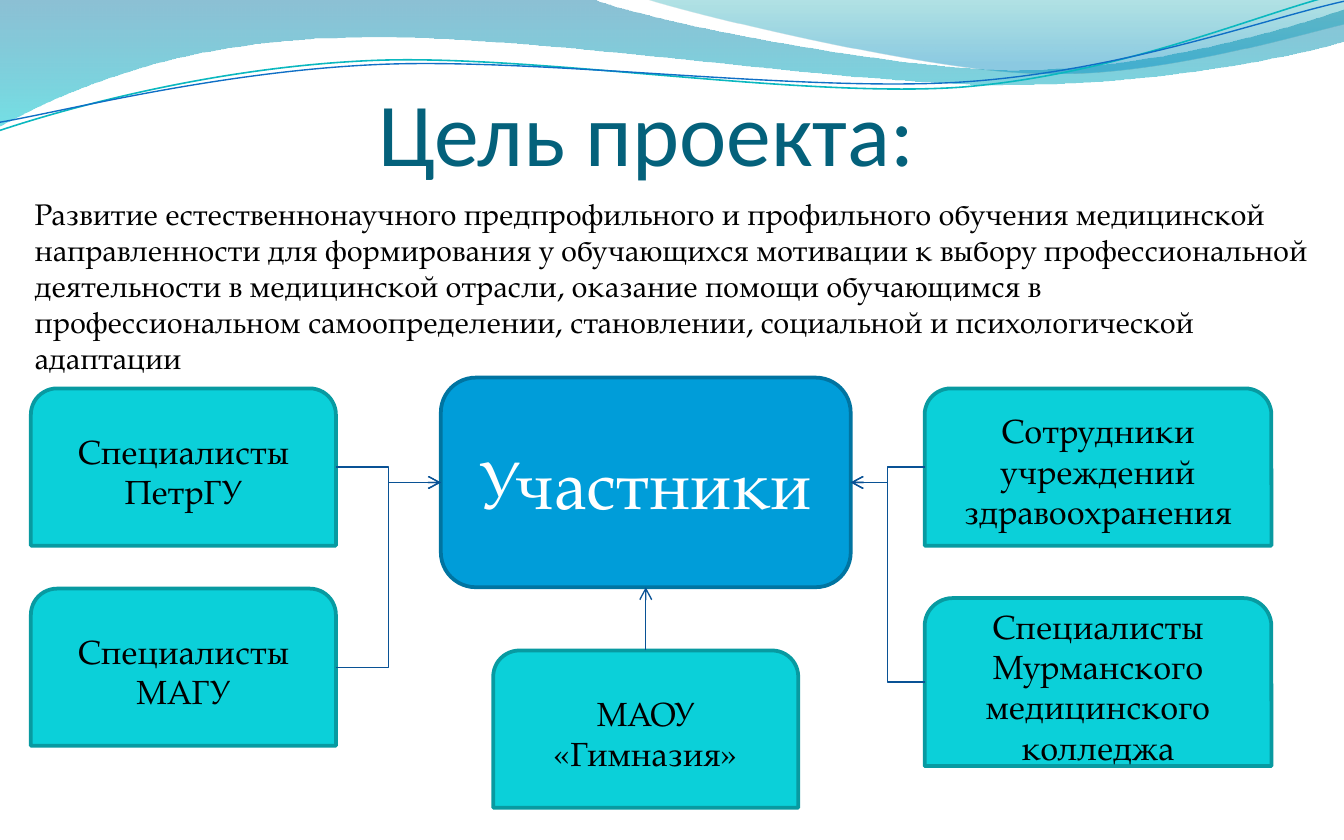
"""Build the project goal slide: a wave header, a statement and a diagram of participants."""
import dataclasses

import lxml.etree
import pptx
import pptx.dml.color
import pptx.enum.shapes
import pptx.enum.text
import pptx.oxml.ns
import pptx.util

Inches = pptx.util.Inches
Pt = pptx.util.Pt
qn = pptx.oxml.ns.qn
rgb = pptx.dml.color.RGBColor.from_string
MSO_SHAPE = pptx.enum.shapes.MSO_SHAPE
MSO_CONNECTOR = pptx.enum.shapes.MSO_CONNECTOR
MSO_ANCHOR = pptx.enum.text.MSO_ANCHOR
PP_ALIGN = pptx.enum.text.PP_ALIGN


@dataclasses.dataclass(frozen=True)
class Theme:
    title_font: str = "Calibri"
    body_font: str = "TeX Gyre Pagella"
    title_size: int = 48
    hub_size: int = 36
    box_size: int = 18
    body_size: int = 16
    title: str = "04617B"
    dark: str = "000000"
    light: str = "FFFFFF"
    hub_fill: str = "009DD9"
    hub_line: str = "0074A1"
    box_fill: str = "0BD0D9"
    box_line: str = "089AA1"
    arrow: str = "095295"
    large_wave: tuple = ((0, "0074A1", 45), (1, "00C6CF", 55))
    small_wave: tuple = ((0, "00A1A9", 30), (0.8, "008BBF", 45))
    teal_curve: str = "0AB8BF"
    blue_curve: str = "0F6FC6"


theme = Theme()


def write_text(shape, text, size, color, font, align, anchor):
    frame = shape.text_frame
    frame.word_wrap = True
    frame.vertical_anchor = anchor
    paragraph = frame.paragraphs[0]
    paragraph.alignment = align
    run = paragraph.add_run()
    run.text = text
    run.font.size = Pt(size)
    run.font.name = font
    run.font.color.rgb = rgb(color)


def draw_outline(shapes, start, segments, closed):
    builder = shapes.build_freeform(Inches(start[0]), Inches(start[1]))
    points = [(Inches(x), Inches(y)) for segment in segments for x, y in segment]
    builder.add_line_segments(points, close=closed)
    shape = builder.convert_to_shape()
    shape.shadow.inherit = False
    steps = iter(list(shape._element.spPr.iter(qn("a:lnTo"))))
    for segment in segments:
        first, *others = [next(steps) for point in segment]
        if others:
            first.tag = qn("a:cubicBezTo")
        for other in others:
            first.append(other[0])
            other.getparent().remove(other)
    return shape


presentation = pptx.Presentation()
presentation.slide_width = Inches(10)
presentation.slide_height = Inches(6.25)
slide = presentation.slides.add_slide(presentation.slide_layouts[6])
shapes = slide.shapes

waves = [
    ((0, 0), [
        ((4.4, -0.01),),
        ((4.76, 0.14), (6.64, 0.52), (7.58, 0.52)),
        ((8.53, 0.52), (9.58, 0.21), (10, 0.07)),
        ((10.01, 0.3),),
        ((9.83, 0.37), (8.7, 0.63), (7.46, 0.63)),
        ((6.22, 0.63), (3.82, 0.23), (2.57, 0.28)),
        ((1.29, 0.3), (0.46, 0.69), (-0.01, 0.94)),
    ], theme.large_wave),
    ((4.79, -0.01), [
        ((5.09, 0.09), (6.82, 0.51), (7.69, 0.54)),
        ((8.56, 0.58), (9.61, 0.27), (10, 0.18)),
        ((10, 0),),
    ], theme.small_wave),
]
for start, segments, stops in waves:
    wave = draw_outline(shapes, start, segments, True)
    wave.line.fill.background()
    wave.fill.gradient()
    wave.fill.gradient_angle = 270
    for stop, (position, color, opacity) in zip(wave.fill.gradient_stops, stops):
        stop.position = position
        stop.color.rgb = rgb(color)
    for element, (position, color, opacity) in zip(wave._element.spPr.iter(qn("a:srgbClr")), stops):
        lxml.etree.SubElement(element, qn("a:alpha"), val=str(opacity * 1000))

curves = [
    ((0, 0.97), [
        ((0.48, 0.81), (1.58, 0.5), (2.77, 0.45)),
        ((3.95, 0.4), (5.92, 0.73), (7.13, 0.65)),
        ((8.33, 0.56), (9.39, 0.09), (9.98, -0.05)),
    ], theme.teal_curve, 0.85),
    ((0, 0.91), [
        ((0.47, 0.83), (1.64, 0.53), (2.83, 0.48)),
        ((4.03, 0.43), (5.97, 0.69), (7.17, 0.61)),
        ((8.36, 0.53), (9.41, 0.14), (10, 0.01)),
    ], theme.blue_curve, 0.75),
]
for start, segments, color, width in curves:
    curve = draw_outline(shapes, start, segments, False)
    curve.fill.background()
    curve.line.color.rgb = rgb(color)
    curve.line.width = Pt(width)

title = shapes.add_textbox(Inches(0.31), Inches(0.62), Inches(9), Inches(0.75))
title.text_frame.margin_left = title.text_frame.margin_right = title.text_frame.margin_bottom = 0
write_text(title, "Цель проекта:", theme.title_size, theme.title, theme.title_font,
           PP_ALIGN.CENTER, MSO_ANCHOR.BOTTOM)

statement = shapes.add_textbox(Inches(0.16), Inches(1.41), Inches(9.69), Inches(1.18))
write_text(
    statement,
    "Развитие естественнонаучного предпрофильного и профильного обучения медицинской "
    "направленности для формирования у обучающихся мотивации к выбору профессиональной "
    "деятельности в медицинской отрасли, оказание помощи обучающимся в профессиональном "
    "самоопределении, становлении, социальной и психологической адаптации",
    theme.body_size, theme.dark, theme.body_font, PP_ALIGN.LEFT, MSO_ANCHOR.TOP)

hub_left, hub_top, hub_width, hub_height = 3.28, 2.81, 3.05, 1.56
hub_right, hub_bottom = hub_left + hub_width, hub_top + hub_height
hub_center, hub_middle = hub_left + hub_width / 2, hub_top + hub_height / 2
hub = shapes.add_shape(MSO_SHAPE.ROUNDED_RECTANGLE, Inches(hub_left), Inches(hub_top),
                       Inches(hub_width), Inches(hub_height))
hub.shadow.inherit = False
hub.fill.solid()
hub.fill.fore_color.rgb = rgb(theme.hub_fill)
hub.line.color.rgb = rgb(theme.hub_line)
hub.line.width = Pt(2)
write_text(hub, "Участники", theme.hub_size, theme.light, theme.body_font,
           PP_ALIGN.CENTER, MSO_ANCHOR.MIDDLE)

participants = [
    ("Специалисты ПетрГУ", 0.23, 2.89, 2.27, 1.17, "left"),
    ("Специалисты МАГУ", 0.23, 4.38, 2.27, 1.17, "left"),
    ("Сотрудники учреждений здравоохранения", 6.88, 2.89, 2.58, 1.17, "right"),
    ("Специалисты Мурманского медицинского колледжа", 6.88, 4.45, 2.58, 1.25, "right"),
    ("МАОУ «Гимназия»", 3.67, 4.84, 2.27, 1.17, "below"),
]
for name, left, top, width, height, side in participants:
    box = shapes.add_shape(MSO_SHAPE.ROUND_2_SAME_RECTANGLE, Inches(left), Inches(top),
                           Inches(width), Inches(height))
    box.shadow.inherit = False
    box.fill.solid()
    box.fill.fore_color.rgb = rgb(theme.box_fill)
    box.line.color.rgb = rgb(theme.box_line)
    box.line.width = Pt(2)
    write_text(box, name, theme.box_size, theme.dark, theme.body_font,
               PP_ALIGN.CENTER, MSO_ANCHOR.MIDDLE)

    middle = top + height / 2
    kind, *ends = {
        "left": (MSO_CONNECTOR.ELBOW, left + width, middle, hub_left, hub_middle),
        "right": (MSO_CONNECTOR.ELBOW, left, middle, hub_right, hub_middle),
        "below": (MSO_CONNECTOR.STRAIGHT, hub_center, top, hub_center, hub_bottom),
    }[side]
    arrow = shapes.add_connector(kind, *map(Inches, ends))
    arrow.line.color.rgb = rgb(theme.arrow)
    arrow.line.width = Pt(0.75)
    properties = arrow._element.spPr
    lxml.etree.SubElement(properties.get_or_add_ln(), qn("a:tailEnd"), type="arrow")
    lxml.etree.SubElement(properties, qn("a:effectLst"))

presentation.save("out.pptx")
